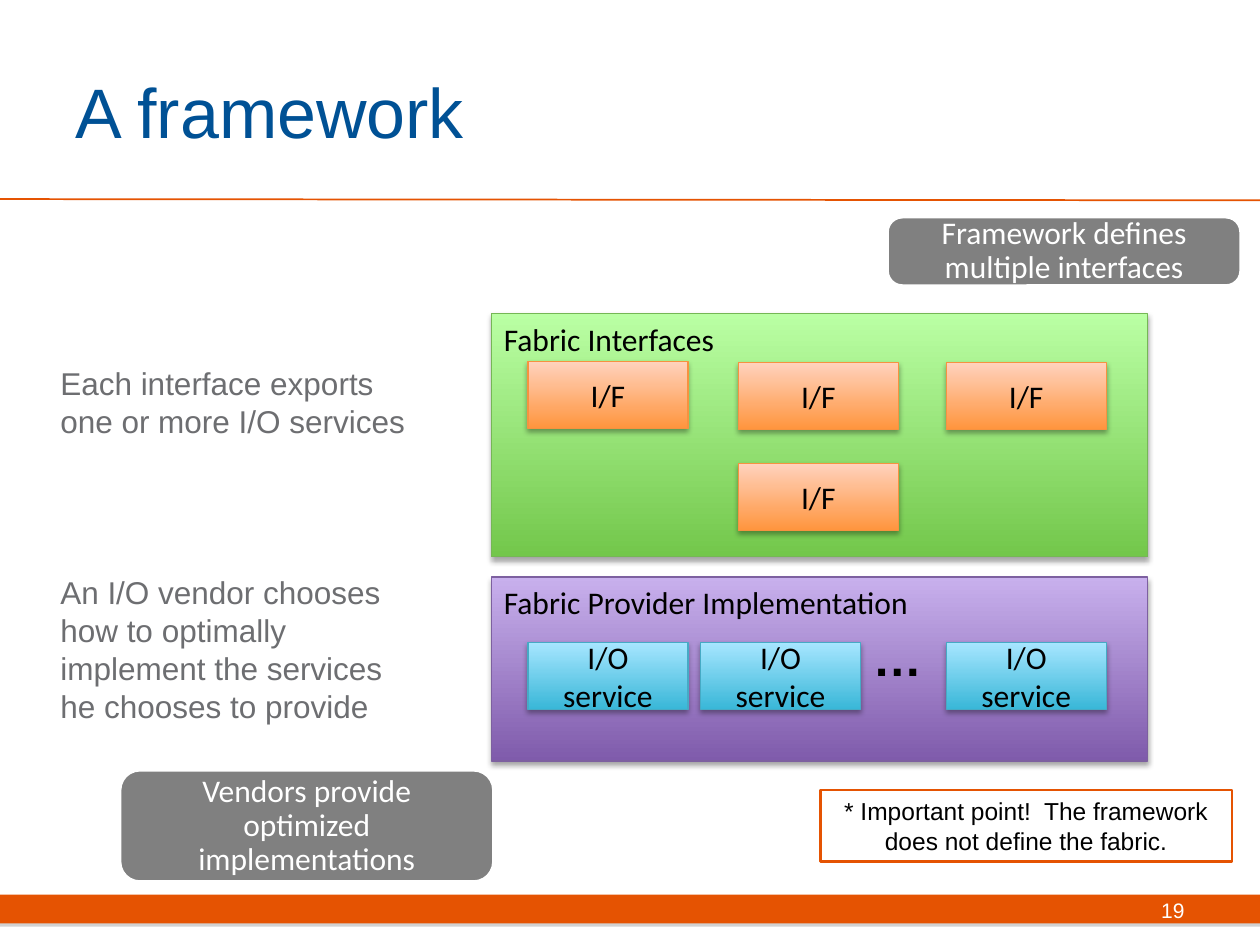
import pptx
import pptx.dml.color
import pptx.enum.shapes
import pptx.enum.text
import pptx.oxml.ns
import pptx.util
from lxml import etree

Inches = pptx.util.Inches
Pt = pptx.util.Pt
RGBColor = pptx.dml.color.RGBColor
Align = pptx.enum.text.PP_ALIGN
Anchor = pptx.enum.text.MSO_ANCHOR
Grow = pptx.enum.text.MSO_AUTO_SIZE.SHAPE_TO_FIT_TEXT
Preset = pptx.enum.shapes.MSO_SHAPE
qn = pptx.oxml.ns.qn

BLACK = RGBColor(0x00, 0x00, 0x00)
WHITE = RGBColor(0xFF, 0xFF, 0xFF)
ORANGE = RGBColor(0xE5, 0x53, 0x02)
BLUE = RGBColor(0x00, 0x51, 0x95)
GRAY = RGBColor(0x80, 0x80, 0x80)
NOTE_GRAY = RGBColor(0x6D, 0x6E, 0x71)

# Gradient bottom, gradient top, outline
GREEN_BLOCK = (RGBColor(0x73, 0xC7, 0x4B), RGBColor(0xBA, 0xFF, 0xA4), RGBColor(0x75, 0xB7, 0x55))
PURPLE_BLOCK = (RGBColor(0x7F, 0x5B, 0xAB), RGBColor(0xC8, 0xB0, 0xED), RGBColor(0x7D, 0x60, 0xA0))
ORANGE_BLOCK = (RGBColor(0xFF, 0x95, 0x3E), RGBColor(0xFF, 0xD2, 0xBD), RGBColor(0xF6, 0x92, 0x40))
CYAN_BLOCK = (RGBColor(0x39, 0xB7, 0xD8), RGBColor(0xA7, 0xE6, 0xFF), RGBColor(0x46, 0xAA, 0xC5))

MARGINS = ("margin_left", "margin_top", "margin_right", "margin_bottom")


def set_values(target, values):
    for name, value in values.items():
        setattr(target, name, value)


def write(box, text, size, color, font="Arial", bold=False, frame_format=None, para_format=None):
    frame = box.text_frame
    set_values(frame, {"word_wrap": True, "vertical_anchor": Anchor.TOP, **(frame_format or {})})
    para = frame.paragraphs[0]
    set_values(para, {"alignment": Align.LEFT, **(para_format or {})})
    span = para.add_run()
    span.text = text
    set_values(span.font, {"name": font, "size": Pt(size), "bold": bold})
    span.font.color.rgb = color


def add_text(page, area, text, size, color, **options):
    box = page.shapes.add_textbox(*map(Inches, area))
    write(box, text, size, color, **options)


def add_box(page, area, preset=Preset.RECTANGLE):
    box = page.shapes.add_shape(preset, *map(Inches, area))
    box.shadow.inherit = False
    return box


def add_shadow(box, color, blur):
    effects = box._element.spPr.find(qn("a:effectLst"))
    shadow = etree.SubElement(effects, qn("a:outerShdw"), blurRad=str(Pt(blur)),
                              dist=str(Pt(1.8)), dir="5400000", rotWithShape="0")
    shade = etree.SubElement(shadow, qn("a:srgbClr"), val=str(color))
    etree.SubElement(shade, qn("a:alpha"), val="35000")


def add_block(page, area, text, colors, centered=False):
    bottom, top, outline = colors
    box = add_box(page, area)
    box.fill.gradient()
    box.fill.gradient_angle = 90
    for stop, color, position in zip(box.fill.gradient_stops, (bottom, top), (0, 1)):
        stop.color.rgb = color
        stop.position = position
    box.line.color.rgb = outline
    box.line.width = Pt(0.75)
    add_shadow(box, BLACK, 3.1)
    write(box, text, 18, BLACK, font="Calibri",
          frame_format={"vertical_anchor": Anchor.MIDDLE if centered else Anchor.TOP},
          para_format={"alignment": Align.CENTER if centered else Align.LEFT})


def add_callout(page, area, text, rounding):
    box = add_box(page, area, Preset.ROUNDED_RECTANGLE)
    box.adjustments[0] = rounding
    box.fill.solid()
    box.fill.fore_color.rgb = GRAY
    box.line.color.rgb = WHITE
    box.line.width = Pt(2)
    write(box, text, 18, WHITE, font="Calibri",
          frame_format={"vertical_anchor": Anchor.MIDDLE, **dict.fromkeys(MARGINS, Inches(0.16))},
          para_format={"alignment": Align.CENTER, "line_spacing": 0.9})


def add_rule(page, start, end):
    kind = pptx.enum.shapes.MSO_CONNECTOR.STRAIGHT
    rule = page.shapes.add_connector(kind, *map(Inches, start + end))
    rule.line.color.rgb = ORANGE
    rule.line.width = Pt(1)
    etree.SubElement(rule._element.spPr, qn("a:effectLst"))


def add_footer_bar(page):
    bar = add_box(page, (0, 7.1, 10, 0.23))
    bar.fill.solid()
    bar.fill.fore_color.rgb = ORANGE
    bar.line.fill.background()
    add_shadow(bar, GRAY, 0)


def add_important_point(page):
    box = add_box(page, (6.51, 6.27, 3.27, 0.57))
    box.fill.background()
    box.line.color.rgb = ORANGE
    box.line.width = Pt(1.5)
    write(box, "* Important point!  The framework does not define the fabric.", 14, BLACK,
          frame_format={"auto_size": Grow}, para_format={"alignment": Align.CENTER})


def main():
    deck = pptx.Presentation()
    deck.slide_width, deck.slide_height = Inches(10), Inches(7.5)
    page = deck.slides.add_slide(deck.slide_layouts[6])

    # Header and footer
    add_footer_bar(page)
    add_rule(page, (0, 1.58), (10, 1.59))
    middle = {"vertical_anchor": Anchor.MIDDLE}
    add_text(page, (0.5, 0.25, 8.17, 1.25), "A framework", 40, BLUE, frame_format=middle)
    add_text(page, (7.17, 7.02, 2.33, 0.4), "19", 12, WHITE, frame_format=middle,
             para_format={"alignment": Align.RIGHT})

    # Interfaces
    add_block(page, (3.9, 2.49, 5.21, 1.93), "Fabric Interfaces", GREEN_BLOCK)
    for left, top in ((4.19, 2.87), (5.86, 2.88), (7.51, 2.88), (5.86, 3.68)):
        add_block(page, (left, top, 1.27, 0.53), "I/F", ORANGE_BLOCK, centered=True)

    # Provider services
    add_block(page, (3.9, 4.58, 5.21, 1.46), "Fabric Provider Implementation", PURPLE_BLOCK)
    for left in (4.19, 5.56, 7.51):
        add_block(page, (left, 5.1, 1.27, 0.53), "I/O service", CYAN_BLOCK, centered=True)
    add_text(page, (6.83, 4.93, 0.59, 0.57), "…", 28, BLACK, bold=True,
             frame_format={"word_wrap": False, "auto_size": Grow})

    # Callouts
    add_callout(page, (7.04, 1.72, 2.81, 0.55), "Framework defines multiple interfaces", 0.22)
    add_callout(page, (0.95, 6.11, 2.97, 0.89), "Vendors provide optimized implementations", 0.18)
    add_important_point(page)

    # Side notes
    for top, height, text in (
        (2.84, 0.71, "Each interface exports one or more I/O services"),
        (4.5, 1.31, "An I/O vendor chooses how to optimally implement the services he chooses to provide"),
    ):
        add_text(page, (0.38, top, 3.08, height), text, 18, NOTE_GRAY,
                 frame_format={"auto_size": Grow})

    deck.save("out.pptx")


if __name__ == "__main__":
    main()
